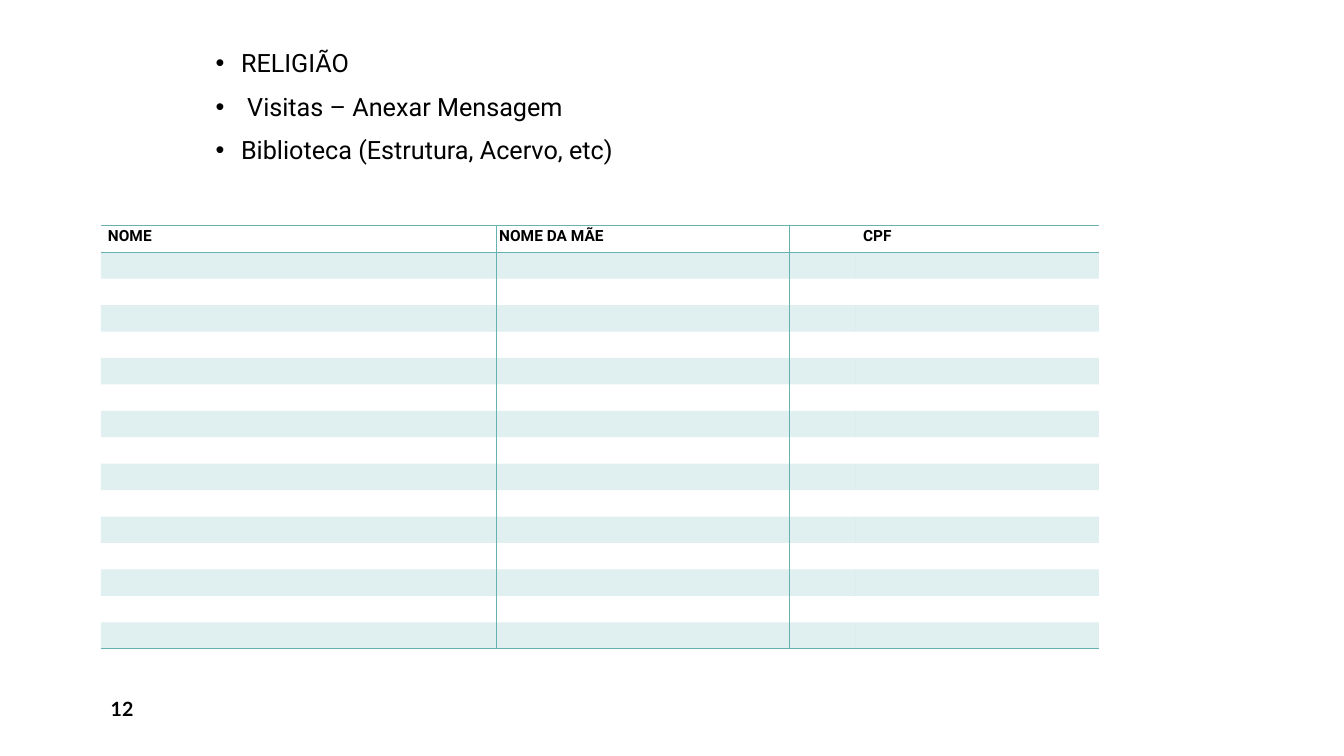
import pptx
import pptx.dml.color
import pptx.enum.shapes
import pptx.enum.text
import pptx.oxml.ns
import pptx.util
from lxml import etree

Cm, Pt = pptx.util.Cm, pptx.util.Pt
qn = pptx.oxml.ns.qn
HUES = {"ink": "000000", "teal": "66B2B0", "page": "FFFFFF"}
TOPICS = ["RELIGIÃO", " Visitas – Anexar Mensagem", "Biblioteca (Estrutura, Acervo, etc)"]
HEADS = ["NOME", "NOME DA MÃE", "CPF"]
WIDTHS = [9.86, 9.17, 6.12]
RULES = [9.98, 17.35]
ROWS = 16


def hue(name):
    return pptx.dml.color.RGBColor.from_string(HUES[name])


def write(para, text, face, size, bold=False):
    run = para.add_run()
    run.text = text
    run.font.name = face
    run.font.size = Pt(size)
    run.font.bold = bold
    run.font.color.rgb = hue("ink")


def topics(slide, x, y, w, h):
    body = slide.placeholders[1]
    body.left, body.top, body.width, body.height = Cm(x), Cm(y), Cm(w), Cm(h)
    frame = body.text_frame
    frame.auto_size = pptx.enum.text.MSO_AUTO_SIZE.NONE
    frame.vertical_anchor = pptx.enum.text.MSO_ANCHOR.TOP
    for i, text in enumerate(TOPICS):
        para = frame.add_paragraph() if i else frame.paragraphs[0]
        props = para._p.get_or_add_pPr()
        props.set("marL", str(Cm(0.64)))
        props.set("indent", str(Cm(-0.64)))
        etree.SubElement(props, qn("a:buFont"), typeface="Arial")
        etree.SubElement(props, qn("a:buChar"), char="•")
        para.line_spacing = 1.07
        para.space_before = Pt(0)
        para.space_after = Pt(8)
        write(para, text, "Roboto", 18)


def edge(cell, side):
    line = etree.SubElement(cell._tc.get_or_add_tcPr(), qn("a:" + side), w=str(Pt(1)))
    fill = etree.SubElement(line, qn("a:solidFill"))
    etree.SubElement(fill, qn("a:srgbClr"), val=HUES["teal"])


def tint(cell):
    """Fill a cell with teal at 20% opacity."""
    cell.fill.solid()
    cell.fill.fore_color.rgb = hue("teal")
    color = cell._tc.tcPr.find(qn("a:solidFill")).find(qn("a:srgbClr"))
    etree.SubElement(color, qn("a:alpha"), val="20000")


def fill_cell(cell, row, col):
    cell.margin_left = cell.margin_right = Cm(0.18)
    cell.margin_top = cell.margin_bottom = 0
    para = cell.text_frame.paragraphs[0]
    para.line_spacing = 1.07
    if row == 0:
        write(para, HEADS[col], "Roboto", 11, True)
        edge(cell, "lnT")
    else:
        etree.SubElement(para._p, qn("a:endParaRPr"), sz="1100")
    if row in (0, ROWS - 1):
        edge(cell, "lnB")
    if row % 2:
        tint(cell)
    else:
        cell.fill.background()


def register(slide, x, y, w, h):
    """Place the banded name table and its upright rules."""
    grid = slide.shapes.add_table(ROWS, len(HEADS), Cm(x), Cm(y), Cm(w), Cm(h)).table
    grid.first_row = grid.horz_banding = False
    style = grid._tbl.tblPr.find(qn("a:tableStyleId"))
    style.text = "{2D5ABB26-0587-4C30-8999-92F81FD0307C}"
    for col, width in zip(grid.columns, WIDTHS):
        col.width = Cm(width)
    for r, row in enumerate(grid.rows):
        row.height = Cm(h / ROWS)
        for c, cell in enumerate(row.cells):
            fill_cell(cell, r, c)
    for dx in RULES:
        rule = slide.shapes.add_connector(
            pptx.enum.shapes.MSO_CONNECTOR.STRAIGHT, Cm(x + dx), Cm(y), Cm(x + dx), Cm(y + h))
        rule.line.color.rgb = hue("teal")
        rule.line.width = Pt(0.5)
        etree.SubElement(rule._element.spPr, qn("a:effectLst"))


def folio(slide, x, y, w, h):
    """Place the page number."""
    frame = slide.shapes.add_textbox(Cm(x), Cm(y), Cm(w), Cm(h)).text_frame
    frame.word_wrap = True
    frame.vertical_anchor = pptx.enum.text.MSO_ANCHOR.MIDDLE
    write(frame.paragraphs[0], "12", "Lato", 14, True)


def main():
    deck = pptx.Presentation()
    deck.slide_width, deck.slide_height = Cm(33.87), Cm(19.05)
    slide = deck.slides.add_slide(deck.slide_layouts[1])
    slide.background.fill.solid()
    slide.background.fill.fore_color.rgb = hue("page")
    title = slide.shapes.title._element
    title.getparent().remove(title)
    topics(slide, 5.18, 1.02, 26.42, 13.92)
    folio(slide, 2.54, 17.35, 7.42, 1.02)
    register(slide, 2.54, 5.69, sum(WIDTHS), 10.67)
    deck.save("out.pptx")


if __name__ == "__main__":
    main()
